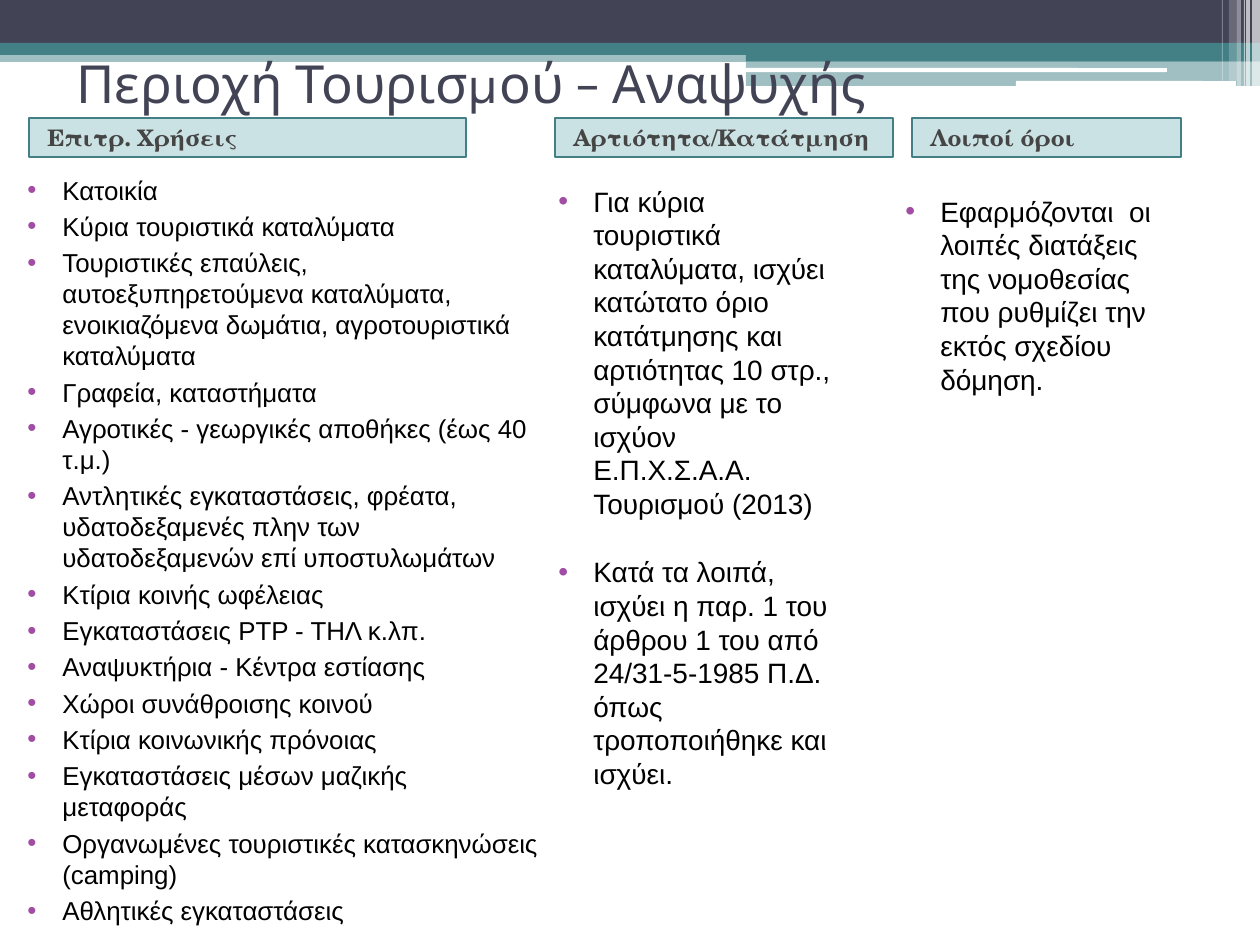
import pptx
import pptx.dml.color
import pptx.enum.shapes
import pptx.enum.text
import pptx.util
from lxml import etree
from pptx.oxml.ns import qn

SCALE = 914400 / 126  # EMU per px
SHAPE = pptx.enum.shapes.MSO_SHAPE
ANCHOR = pptx.enum.text.MSO_ANCHOR
ALIGN = pptx.enum.text.PP_ALIGN
NAVY, TEAL, WHITE = "424456", "438086", "FFFFFF"

USES = [
    "Κατοικία",
    "Κύρια τουριστικά καταλύματα",
    "Τουριστικές επαύλεις, αυτοεξυπηρετούμενα καταλύματα, "
    "ενοικιαζόμενα δωμάτια, αγροτουριστικά καταλύματα",
    "Γραφεία, καταστήματα",
    "Αγροτικές - γεωργικές αποθήκες (έως 40 τ.μ.)",
    "Αντλητικές εγκαταστάσεις, φρέατα, υδατοδεξαμενές πλην των "
    "υδατοδεξαμενών επί υποστυλωμάτων",
    "Κτίρια κοινής ωφέλειας",
    "Εγκαταστάσεις ΡΤΡ - ΤΗΛ κ.λπ.",
    "Αναψυκτήρια - Κέντρα εστίασης",
    "Χώροι συνάθροισης κοινού",
    "Κτίρια κοινωνικής πρόνοιας",
    "Εγκαταστάσεις μέσων μαζικής μεταφοράς",
    "Οργανωμένες τουριστικές κατασκηνώσεις (camping)",
    "Αθλητικές εγκαταστάσεις",
]
PLOT_RULES = [
    "Για κύρια τουριστικά καταλύματα, ισχύει κατώτατο όριο κατάτμησης και "
    "αρτιότητας 10 στρ., σύμφωνα με το ισχύον Ε.Π.Χ.Σ.Α.Α. Τουρισμού (2013)",
    "Κατά τα λοιπά, ισχύει η παρ. 1 του άρθρου 1 του από 24/31-5-1985 Π.Δ. "
    "όπως τροποποιήθηκε και ισχύει.",
]
OTHER_TERMS = [
    "Εφαρμόζονται  οι λοιπές διατάξεις της νομοθεσίας που ρυθμίζει την "
    "εκτός σχεδίου δόμηση.",
]


def px(n):
    return pptx.util.Emu(round(n * SCALE))


def rgb(color):
    return pptx.dml.color.RGBColor.from_string(color)


def set_font(p, name, size, color, bold=False):
    p.font.name, p.font.size, p.font.bold = name, pptx.util.Pt(size), bold
    p.font.color.rgb = rgb(color)


def set_indent(p, left, first):
    pPr = p._p.get_or_add_pPr()
    pPr.set("marL", str(px(left)))
    pPr.set("indent", str(px(first)))
    return pPr


def add_box(slide, box, color, alpha=100, kind=SHAPE.RECTANGLE):
    sp = slide.shapes.add_shape(kind, *map(px, box))
    sp.shadow.inherit = False
    sp.fill.solid()
    sp.fill.fore_color.rgb = rgb(color)
    sp.line.fill.background()
    if alpha < 100:
        clr = sp._element.spPr.find(qn("a:solidFill"))[0]
        etree.SubElement(clr, qn("a:alpha"), val=str(alpha * 1000))
    return sp


def add_banner(slide, x, y, w):
    # Full-width bands, then the deeper step on the right
    step = x + 746
    for left, top, height, color, alpha in [
        (x, 50, 12, TEAL, 50), (x, 0, 43, NAVY, 100), (x, 43, 12, TEAL, 100),
        (step, 49, 12, TEAL, 100), (step, 61, 25, TEAL, 50),
    ]:
        add_box(slide, (left, y + top, x + w - left, height), color, alpha)
    # White strokes in the step
    for left, top, width, height in [(745, 68, 422, 4), (1016, 81, 220, 5)]:
        add_box(slide, (x + left, y + top, width, height), WHITE,
                kind=SHAPE.ROUNDED_RECTANGLE)
    # Fading stripes, placed by distance from the right edge
    for back, width, height, alpha in [
        (8, 8, 86, 65), (14, 4, 86, 65), (16, 1, 86, 60),
        (23, 4, 86, 40), (31, 8, 81, 20), (38, 1, 81, 30),
    ]:
        add_box(slide, (x + w - back, y, width, height), WHITE, alpha)


def add_title(slide, text, x, y, w, h):
    title = slide.shapes.title
    title.left, title.top, title.width, title.height = map(px, (x, y, w, h))
    tf = title.text_frame
    tf.text = text
    tf.vertical_anchor = ANCHOR.MIDDLE
    tf.auto_size = pptx.enum.text.MSO_AUTO_SIZE.NONE
    p = tf.paragraphs[0]
    p.alignment = ALIGN.LEFT
    set_font(p, "Karla", 30, NAVY)
    slide.shapes._spTree.append(title._element)  # in front of the banner


def add_heading(slide, text, x, y, w, h):
    sp = add_box(slide, (x, y, w, h), "328E97", 25)
    sp.line.color.rgb = rgb(TEAL)
    sp.line.width = pptx.util.Pt(1)
    tf = sp.text_frame
    tf.text = text
    tf.word_wrap = True
    tf.vertical_anchor = ANCHOR.MIDDLE
    p = tf.paragraphs[0]
    p.alignment = ALIGN.LEFT
    p.space_before = pptx.util.Pt(3)
    set_indent(p, 6, 0)
    set_font(p, "TeX Gyre Schola", 13, "454545", True)


def add_bullets(slide, items, x, y, w, h, size, gap=3):
    tf = slide.shapes.add_textbox(*map(px, (x, y, w, h))).text_frame
    tf.word_wrap = True
    tf.text = "\n".join(items)
    for i, p in enumerate(tf.paragraphs):
        p.space_before = pptx.util.Pt(gap if i else 3)
        set_font(p, "Arial", size, "000000")
        pPr = set_indent(p, 50, -35)
        bullet = [etree.Element(qn("a:buClr")),
                  etree.Element(qn("a:buFont"), typeface="Arial"),
                  etree.Element(qn("a:buChar"), char="•")]
        etree.SubElement(bullet[0], qn("a:srgbClr"), val="A04DA3")
        for offset, el in enumerate(bullet):  # bullets precede defRPr
            pPr.insert(list(pPr).index(pPr.find(qn("a:defRPr"))), el)


def main():
    prs = pptx.Presentation()
    prs.slide_width, prs.slide_height = px(1260), px(945)
    slide = prs.slides.add_slide(prs.slide_layouts[5])

    add_banner(slide, 0, 0, 1260)
    add_title(slide, "Περιοχή Τουρισμού – Αναψυχής", 64, 56, 1162, 53)

    # Column headings
    for text, x, w in [("Επιτρ. Χρήσεις", 29, 437),
                       ("Αρτιότητα/Κατάτμηση", 555, 338),
                       ("Λοιποί όροι", 912, 269)]:
        add_heading(slide, text, x, 118, w, 39)

    # Column texts
    add_bullets(slide, USES, 0, 168, 551, 758, 14.8)
    add_bullets(slide, PLOT_RULES, 531, 178, 317, 679, 16, gap=20)
    add_bullets(slide, OTHER_TERMS, 878, 188, 317, 536, 16)

    prs.save("out.pptx")


if __name__ == "__main__":
    main()
